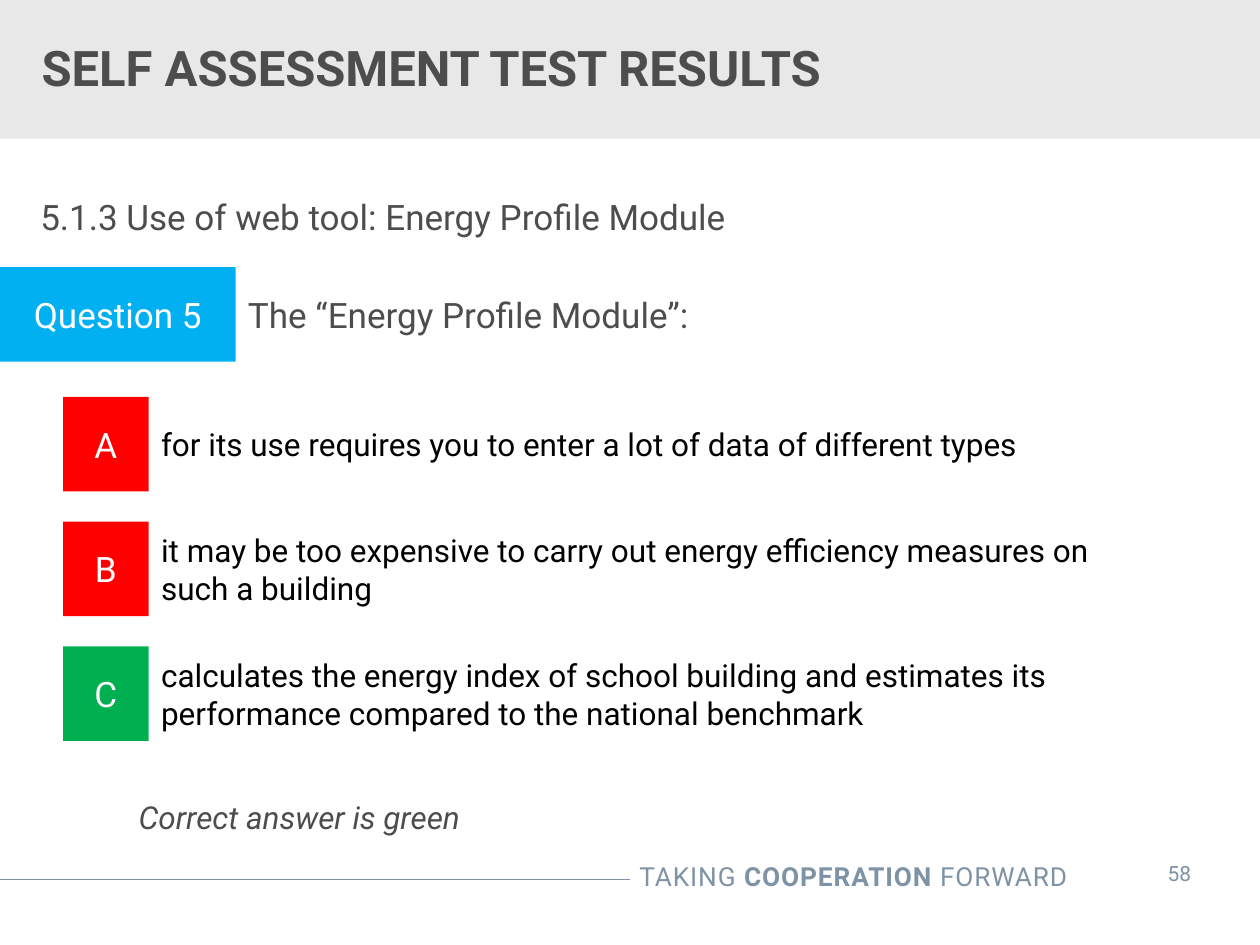
from dataclasses import dataclass

from pptx import Presentation
from pptx.dml.color import RGBColor
from pptx.enum.shapes import MSO_CONNECTOR, MSO_SHAPE
from pptx.enum.text import MSO_ANCHOR, MSO_AUTO_SIZE, PP_ALIGN
from pptx.oxml.ns import qn
from pptx.util import Inches, Pt
from lxml import etree

RECTANGLE = MSO_SHAPE.RECTANGLE
STRAIGHT = MSO_CONNECTOR.STRAIGHT
TOP, MIDDLE = MSO_ANCHOR.TOP, MSO_ANCHOR.MIDDLE
LEFT, CENTER, RIGHT = PP_ALIGN.LEFT, PP_ALIGN.CENTER, PP_ALIGN.RIGHT
NO_AUTOFIT = MSO_AUTO_SIZE.NONE


@dataclass(frozen=True)
class Theme:
    font: str = "Roboto"
    band: RGBColor = RGBColor(0xE8, 0xE8, 0xE8)
    dark: RGBColor = RGBColor(0x4D, 0x4D, 0x4E)
    footer: RGBColor = RGBColor(0x7E, 0x93, 0xA5)
    question: RGBColor = RGBColor(0x00, 0xB0, 0xF0)
    wrong: RGBColor = RGBColor(0xFF, 0x00, 0x00)
    correct: RGBColor = RGBColor(0x00, 0xB0, 0x50)
    white: RGBColor = RGBColor(0xFF, 0xFF, 0xFF)
    black: RGBColor = RGBColor(0x00, 0x00, 0x00)
    title_size: int = 28
    heading_size: int = 20
    answer_size: int = 18
    footer_size: int = 15
    number_size: int = 12


THEME = Theme()


def inches(box):
    return [Inches(value) for value in box]


def write(shape, text, size, color, align=LEFT, anchor=MIDDLE, inset=0.1):
    """Put one paragraph in a shape and return the paragraph."""
    frame = shape.text_frame
    frame.word_wrap = True
    frame.auto_size = NO_AUTOFIT
    frame.vertical_anchor = anchor
    frame.margin_left = frame.margin_right = Inches(inset)
    paragraph = frame.paragraphs[0]
    paragraph.alignment = align
    if text:
        paragraph.add_run().text = text
    font = paragraph.font
    font.name, font.size, font.color.rgb = THEME.font, Pt(size), color
    return paragraph


def add_text(slide, box, *content, **options):
    return write(slide.shapes.add_textbox(*inches(box)), *content, **options)


def add_block(slide, box, fill):
    block = slide.shapes.add_shape(RECTANGLE, *inches(box))
    block.shadow.inherit = False
    block.fill.solid()
    block.fill.fore_color.rgb = fill
    block.line.fill.background()
    return block


def add_header(slide, box, text):
    left, top, width, height = box
    band = add_block(slide, box, THEME.band)
    title = slide.shapes.title
    title._element.addprevious(band._element)  # band goes behind the title
    title.left, title.top, title.width, title.height = inches(
        (left, top + 0.16, 7.2, 0.75))
    paragraph = write(title, text, THEME.title_size, THEME.dark, inset=0.33)
    paragraph.font.bold = True


def add_labelled_row(slide, box, label_width, label, fill, text, size, color):
    """Coloured label on the left, text filling the rest of the box."""
    left, top, width, height = box
    block = add_block(slide, (left, top, label_width, height), fill)
    write(block, label, THEME.heading_size, THEME.white, CENTER)
    add_text(slide, (left + label_width, top, width - label_width, height),
             text, size, color)


def add_answers(slide, box, answers):
    left, top, width, height = box
    row_height = 0.75
    step = (height - row_height) / (len(answers) - 1)
    for index, (label, fill, text) in enumerate(answers):
        add_labelled_row(slide, (left, top + index * step, width, row_height),
                         0.68, label, fill, text, THEME.answer_size, THEME.black)


def add_footer(slide, box, number):
    left, top, width, height = box
    # Rule
    line_y = Inches(top + 0.25)
    rule = slide.shapes.add_connector(
        STRAIGHT, Inches(left), line_y, Inches(left + width / 2), line_y)
    rule.line.color.rgb = THEME.footer
    rule.line.width = Pt(0.75)
    etree.SubElement(rule._element.spPr, qn("a:effectLst"))

    # Motto
    motto = add_text(slide, (left + 3.88, top + 0.05, 4.69, 0.35), "",
                     THEME.footer_size, THEME.footer, align=RIGHT, anchor=TOP)
    for text, bold in (("TAKING ", False), ("COOPERATION", True), (" FORWARD", False)):
        run = motto.add_run()
        run.text = text
        run.font.bold = bold
        run._r.get_or_add_rPr().set("spc", "50")

    # Slide number
    add_text(slide, (left + 8.99, top, 0.74, height), number,
             THEME.number_size, THEME.footer, align=CENTER)


def main():
    presentation = Presentation()
    presentation.slide_width, presentation.slide_height = Inches(10), Inches(7.5)
    slide = presentation.slides.add_slide(presentation.slide_layouts[5])

    add_header(slide, (0, 0, 10, 1.1), "SELF ASSESSMENT TEST RESULTS")
    add_text(slide, (0.32, 1.54, 9.36, 0.36),
             "5.1.3 Use of web tool: Energy Profile Module",
             THEME.heading_size, THEME.dark, inset=0)
    add_labelled_row(slide, (0, 2.12, 10, 0.75), 1.87, "Question 5", THEME.question,
                     "The “Energy Profile Module”:", THEME.heading_size, THEME.dark)
    add_answers(slide, (0.5, 3.15, 8.83, 2.73), [
        ("A", THEME.wrong,
         "for its use requires you to enter a lot of data of different types"),
        ("B", THEME.wrong,
         "it may be too expensive to carry out energy efficiency measures on "
         "such a building"),
        ("C", THEME.correct,
         "calculates the energy index of school building and estimates its "
         "performance compared to the national benchmark"),
    ])
    note = add_text(slide, (1.1, 6.3, 8.58, 0.36), "Correct answer is green",
                    THEME.answer_size, THEME.dark, inset=0)
    note.font.italic = True
    add_footer(slide, (0, 6.73, 10, 0.4), "58")

    presentation.save("out.pptx")


if __name__ == "__main__":
    main()
